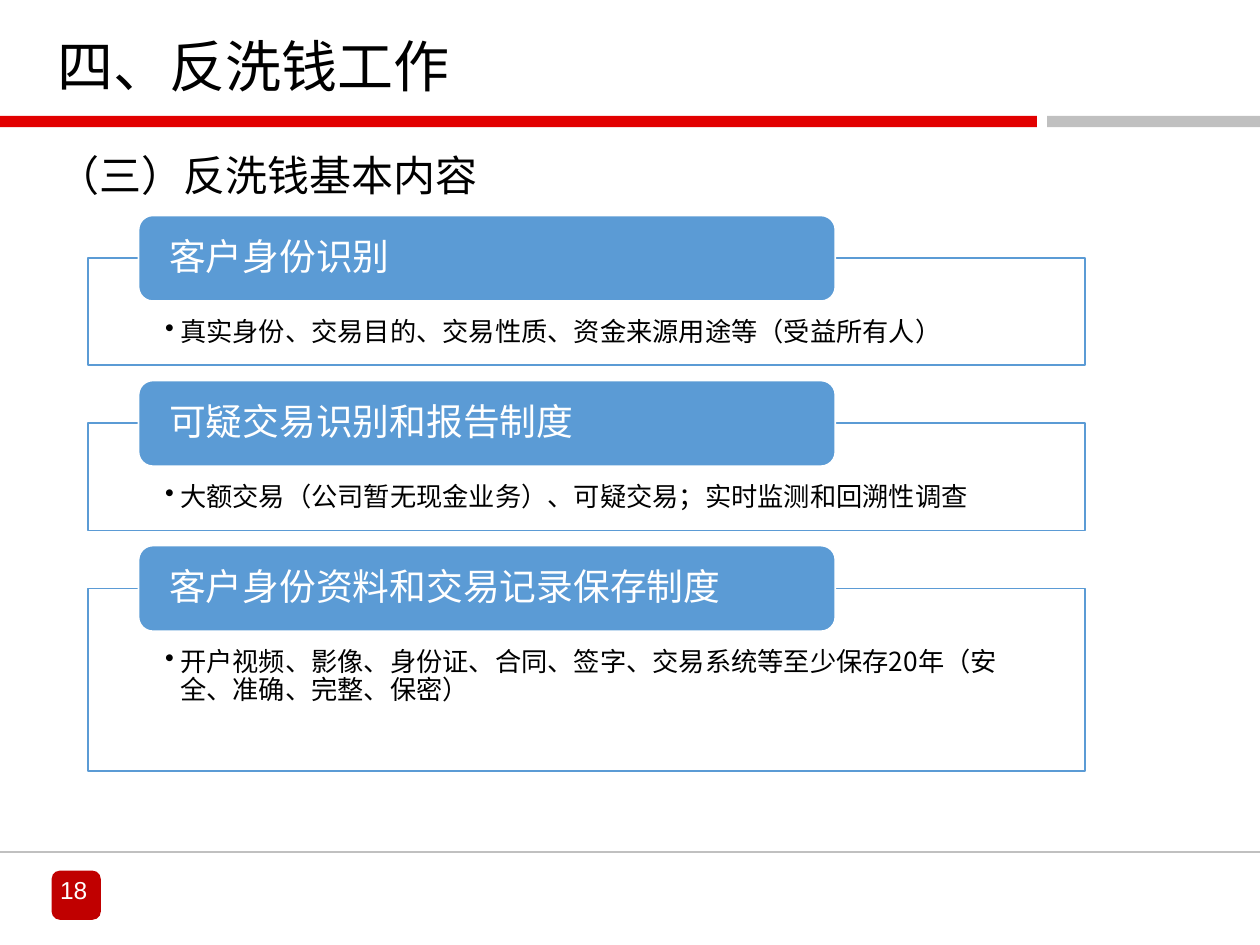
from dataclasses import dataclass

from lxml.etree import SubElement
from pptx import Presentation
from pptx.dml.color import RGBColor
from pptx.enum.shapes import MSO_CONNECTOR, MSO_SHAPE
from pptx.enum.text import MSO_ANCHOR, PP_ALIGN
from pptx.oxml.ns import qn
from pptx.util import Inches, Pt


@dataclass(frozen=True)
class Theme:
    font: str = "Noto Sans CJK SC"
    number_font: str = "Arial"
    black: str = "000000"
    white: str = "FFFFFF"
    blue: str = "5B9BD5"
    red: str = "E20000"
    dark_red: str = "C00000"
    gray: str = "C0C0C0"
    title: int = 32
    subtitle: int = 24
    heading: int = 21
    detail: int = 15
    number: int = 14


THEME = Theme()

SECTIONS = [
    ("客户身份识别", "真实身份、交易目的、交易性质、资金来源用途等（受益所有人）", 0.85),
    ("可疑交易识别和报告制度",
     "大额交易（公司暂无现金业务）、可疑交易；实时监测和回溯性调查", 0.85),
    ("客户身份资料和交易记录保存制度",
     "开户视频、影像、身份证、合同、签字、交易系统等至少保存20年（安全、准确、完整、保密）", 1.45),
]
FIRST_PANEL_TOP = 2.05
PANEL_GAP = 0.46
TAB_RISE = 0.34


def add_block(page, kind, bounds, fill, line=None):
    block = page.shapes.add_shape(kind, *map(Inches, bounds))
    block.shadow.inherit = False
    block.fill.solid()
    block.fill.fore_color.rgb = RGBColor.from_string(fill)
    if line:
        block.line.color.rgb = RGBColor.from_string(line)
        block.line.width = Pt(1)
    else:
        block.line.fill.background()
    return block


def add_rule(page, start, end):
    rule = page.shapes.add_connector(MSO_CONNECTOR.STRAIGHT, *map(Inches, start + end))
    rule.line.color.rgb = RGBColor.from_string(THEME.gray)
    rule.line.width = Pt(1)
    SubElement(rule._element.spPr, qn("a:effectLst"))


def add_bullet(para):
    properties = para._p.get_or_add_pPr()
    properties.set("marL", str(Inches(0.12)))
    properties.set("indent", str(-Inches(0.12)))
    SubElement(properties, qn("a:buChar")).set("char", "•")


def write(box, text, size, color, anchor=MSO_ANCHOR.TOP, align=PP_ALIGN.LEFT,
          insets=(0.1, 0.05, 0.1, 0.05), font=THEME.font, bullet=False):
    frame = box.text_frame
    frame.word_wrap = True
    frame.vertical_anchor = anchor
    (frame.margin_left, frame.margin_top,
     frame.margin_right, frame.margin_bottom) = map(Inches, insets)
    para = frame.paragraphs[0]
    para.text = text
    para.alignment = align
    para.line_spacing = 0.9
    if bullet:
        add_bullet(para)
    para.font.size = Pt(size)
    para.font.name = font
    para.font.color.rgb = RGBColor.from_string(color)
    # East Asian characters take their own typeface
    SubElement(para.font._element, qn("a:ea")).set("typeface", font)


def add_text(page, bounds, *content, **options):
    write(page.shapes.add_textbox(*map(Inches, bounds)), *content, **options)


def add_section(page, top, heading, detail, height):
    panel = add_block(page, MSO_SHAPE.RECTANGLE, (0.7, top, 7.91, height),
                      THEME.white, THEME.blue)
    write(panel, detail, THEME.detail, THEME.black,
          insets=(0.61, 0.48, 0.61, 0.12), bullet=True)
    tab = add_block(page, MSO_SHAPE.ROUNDED_RECTANGLE, (1.1, top - TAB_RISE, 5.53, 0.68),
                    THEME.blue, THEME.white)
    write(tab, heading, THEME.heading, THEME.white,
          anchor=MSO_ANCHOR.MIDDLE, insets=(0.21, 0, 0.21, 0))


def main():
    deck = Presentation()
    deck.slide_width, deck.slide_height = Inches(10), Inches(7.5)
    page = deck.slides.add_slide(deck.slide_layouts[6])

    # Header bars, footer rule and page number
    add_block(page, MSO_SHAPE.ROUNDED_RECTANGLE, (0.41, 6.91, 0.39, 0.39), THEME.dark_red)
    add_block(page, MSO_SHAPE.RECTANGLE, (0, 0.92, 8.23, 0.09), THEME.red)
    add_block(page, MSO_SHAPE.RECTANGLE, (8.31, 0.92, 1.69, 0.09), THEME.gray)
    add_rule(page, (0, 6.76), (10, 6.76))
    add_text(page, (0.23, 6.89, 0.71, 0.37), "18", THEME.number, THEME.white,
             anchor=MSO_ANCHOR.MIDDLE, align=PP_ALIGN.CENTER, font=THEME.number_font)

    # Titles
    add_text(page, (0.36, 0.12, 8.25, 0.72), "四、反洗钱工作", THEME.title, THEME.black,
             anchor=MSO_ANCHOR.BOTTOM)
    add_text(page, (0.36, 1.18, 7.5, 0.58), "（三）反洗钱基本内容", THEME.subtitle, THEME.black)

    # Stacked sections
    top = FIRST_PANEL_TOP
    for heading, detail, height in SECTIONS:
        add_section(page, top, heading, detail, height)
        top += height + PANEL_GAP

    deck.save("out.pptx")


if __name__ == "__main__":
    main()
